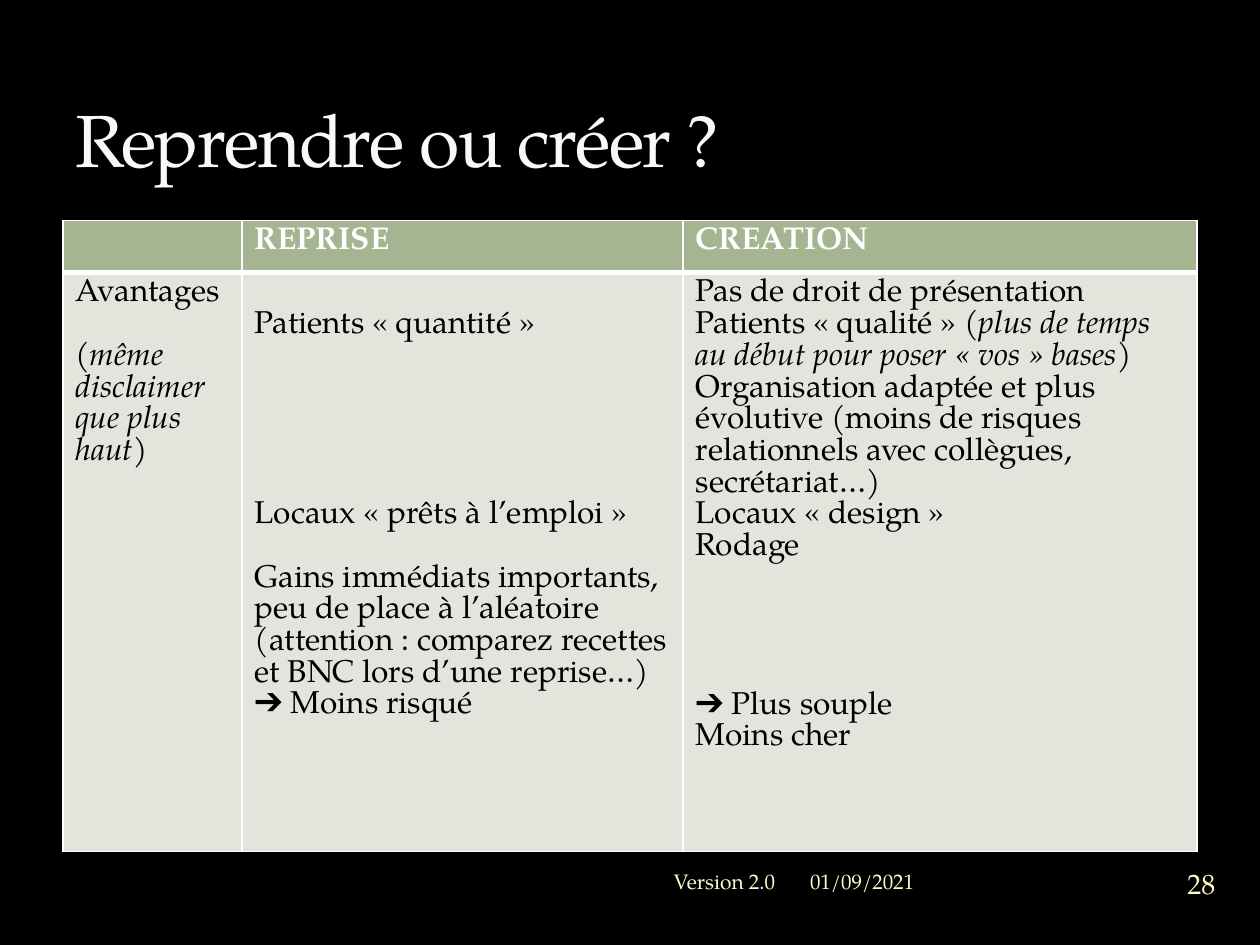
from dataclasses import dataclass

from lxml import etree
from pptx import Presentation
from pptx.dml.color import RGBColor
from pptx.enum.text import MSO_ANCHOR, PP_ALIGN
from pptx.oxml.ns import qn
from pptx.util import Cm, Pt

LEFT, CENTER, RIGHT = PP_ALIGN.LEFT, PP_ALIGN.CENTER, PP_ALIGN.RIGHT
BOTTOM, MIDDLE = MSO_ANCHOR.BOTTOM, MSO_ANCHOR.MIDDLE
TITLE_ONLY = 5


@dataclass(frozen=True)
class Theme:
    font: str = "TeX Gyre Pagella"
    background: str = "000000"
    title: str = "F9F9F9"
    title_outline: str = "3C4422"
    footer: str = "FEFAC9"
    header_text: str = "FFFFFF"
    body_text: str = "000000"
    border: str = "FFFFFF"
    header_fill: str = "A5B592"
    body_fill: str = "E1E5DC"
    title_size: int = 42
    body_size: int = 18
    number_size: int = 16
    footer_size: int = 12
    line_pitch: float = 18.13


THEME = Theme()

COLUMN_WIDTHS = [3.61, 8.89, 10.36]
ROW_HEIGHTS = [1.04, 11.68]
HEADERS = ["", "REPRISE", "CREATION"]

# Each cell: empty lines above it, then paragraphs as (empty lines before, runs).
# Each run is (text, italic).
BODY = [
    (0, [
        (0, [("Avantages", False)]),
        (1, [("(même disclaimer que plus haut)", True)]),
    ]),
    (1, [
        (0, [("Patients « quantité »", False)]),
        (5, [("Locaux « prêts à l’emploi »", False)]),
        (1, [("Gains immédiats importants,", False)]),
        (0, [("peu de place à l’aléatoire (attention : comparez recettes "
              "et BNC lors d’une reprise…)", False)]),
        (0, [("➔ Moins risqué", False)]),
    ]),
    (0, [
        (0, [("Pas de droit de présentation", False)]),
        (0, [("Patients « qualité » ", False),
             ("(plus de temps au début pour poser « vos » bases)", True)]),
        (0, [("Organisation adaptée et plus évolutive (moins de risques "
              "relationnels avec collègues, secrétariat…)", False)]),
        (0, [("Locaux « design »", False)]),
        (0, [("Rodage", False)]),
        (4, [("➔ Plus souple", False)]),
        (0, [("Moins cher", False)]),
    ]),
]

FOOTERS = [
    ("Version 2.0", (5.92, 17.22, 9.96, 1.07), RIGHT, THEME.footer_size, {}),
    ("01/09/2021", (16.08, 17.22, 7.19, 1.07), LEFT, THEME.footer_size, {}),
    ("28", (23.37, 17.17, 1.7, 1.27), CENTER, THEME.number_size,
     {"margin_left": 0, "margin_right": 0, "margin_top": 0, "margin_bottom": 0}),
]


def set_attributes(target, values):
    for name, value in values.items():
        setattr(target, name, value)


def add_run(paragraph, text, size, color, **styles):
    run = paragraph.add_run()
    run.text = text
    set_attributes(run.font, {"name": THEME.font, "size": Pt(size), **styles})
    run.font.color.rgb = RGBColor.from_string(color)
    return run


def add_solid_fill(parent, color):
    fill = etree.SubElement(parent, qn("a:solidFill"))
    return etree.SubElement(fill, qn("a:srgbClr"), val=color)


def format_title(title):
    set_attributes(title, {"left": Cm(1.27), "top": Cm(0.43),
                           "width": Cm(22.86), "height": Cm(3.38)})
    set_attributes(title.text_frame, {"vertical_anchor": BOTTOM, "word_wrap": True})
    paragraph = title.text_frame.paragraphs[0]
    paragraph.alignment = LEFT
    run = add_run(paragraph, "Reprendre ou créer ?", THEME.title_size, THEME.title)
    properties = run.font._element
    properties.set("spc", "-100")
    outline = etree.Element(qn("a:ln"), w=str(Pt(0.25)))
    color = add_solid_fill(outline, THEME.title_outline)
    etree.SubElement(color, qn("a:alpha"), val="25000")
    properties.insert(0, outline)


def set_borders(cell, widths):
    """Draw the left, right, top and bottom borders, widths in points."""
    properties = cell._tc.get_or_add_tcPr()
    for index, (side, width) in enumerate(zip("LRTB", widths)):
        line = etree.Element(qn(f"a:ln{side}"), w=str(Pt(width)))
        add_solid_fill(line, THEME.border)
        properties.insert(index, line)


def format_cell(cell, fill, borders):
    cell.fill.solid()
    cell.fill.fore_color.rgb = RGBColor.from_string(fill)
    set_borders(cell, borders)


def fill_body_cell(cell, lines_above, paragraphs):
    cell.margin_top = Cm(0.13) + Pt(lines_above * THEME.line_pitch)
    frame = cell.text_frame
    for index, (lines_before, runs) in enumerate(paragraphs):
        paragraph = frame.add_paragraph() if index else frame.paragraphs[0]
        if lines_before:
            paragraph.space_before = Pt(lines_before * THEME.line_pitch)
        for text, italic in runs:
            add_run(paragraph, text, THEME.body_size, THEME.body_text,
                    bold=False, italic=italic)


def add_comparison_table(slide):
    table = slide.shapes.add_table(
        len(ROW_HEIGHTS), len(COLUMN_WIDTHS), Cm(1.27), Cm(4.45),
        Cm(sum(COLUMN_WIDTHS)), Cm(sum(ROW_HEIGHTS))).table
    for column, width in zip(table.columns, COLUMN_WIDTHS):
        column.width = Cm(width)
    for row, height in zip(table.rows, ROW_HEIGHTS):
        row.height = Cm(height)
    for index, (header, body) in enumerate(zip(HEADERS, BODY)):
        header_cell, body_cell = table.cell(0, index), table.cell(1, index)
        format_cell(header_cell, THEME.header_fill, (1, 1, 1, 3))
        format_cell(body_cell, THEME.body_fill, (1, 1, 3, 1))
        if header:
            add_run(header_cell.text_frame.paragraphs[0], header,
                    THEME.body_size, THEME.header_text, bold=True)
        fill_body_cell(body_cell, *body)


def add_footer(slide, text, box, alignment, size, margins):
    frame = slide.shapes.add_textbox(*map(Cm, box)).text_frame
    set_attributes(frame, {"word_wrap": True, "vertical_anchor": MIDDLE, **margins})
    paragraph = frame.paragraphs[0]
    paragraph.alignment = alignment
    add_run(paragraph, text, size, THEME.footer)


def main():
    presentation = Presentation()
    set_attributes(presentation, {"slide_width": Cm(25.4), "slide_height": Cm(19.05)})
    slide = presentation.slides.add_slide(presentation.slide_layouts[TITLE_ONLY])
    slide.background.fill.solid()
    slide.background.fill.fore_color.rgb = RGBColor.from_string(THEME.background)
    format_title(slide.shapes.title)
    add_comparison_table(slide)
    for footer in FOOTERS:
        add_footer(slide, *footer)
    presentation.save("out.pptx")


if __name__ == "__main__":
    main()
